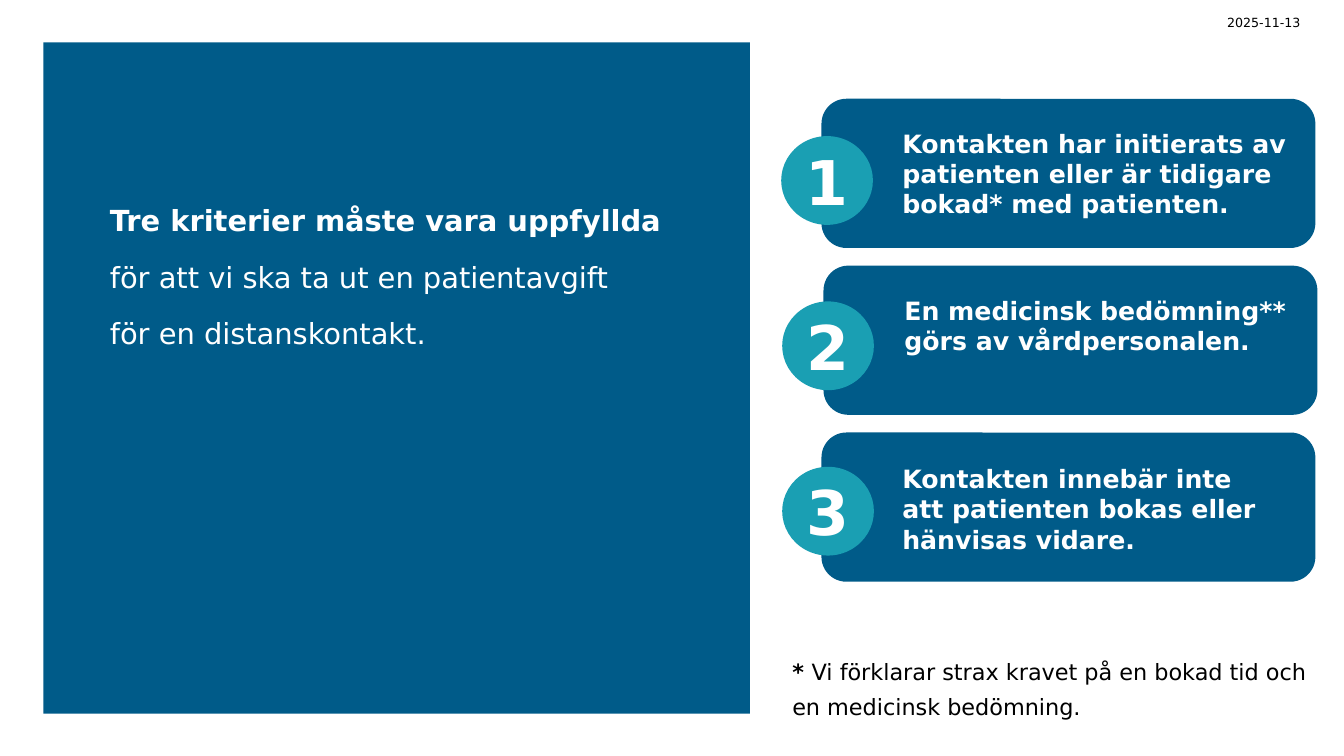
from dataclasses import dataclass

import pptx
import pptx.dml.color
import pptx.enum.shapes
import pptx.enum.text
import pptx.util

Pt = pptx.util.Pt
RGBColor = pptx.dml.color.RGBColor
MSO_SHAPE = pptx.enum.shapes.MSO_SHAPE
MSO_ANCHOR = pptx.enum.text.MSO_ANCHOR
PP_ALIGN = pptx.enum.text.PP_ALIGN

BLUE = RGBColor(0x00, 0x5B, 0x89)
TEAL = RGBColor(0x1A, 0x9F, 0xB3)
WHITE = RGBColor(0xFF, 0xFF, 0xFF)
BLACK = RGBColor(0x00, 0x00, 0x00)
FONT = "DejaVu Sans"

CARD_TOP, CARD_PITCH = 70.56, 119.2
BADGE_TOP, BADGE_PITCH = 97.2, 118.1


@dataclass
class Box:
    left: float
    top: float
    width: float
    height: float


@dataclass
class Run:
    text: str
    bold: bool = False


@dataclass
class Criterion:
    text: str
    card_left: float
    badge_left: float
    top_inset: float = 3.6
    bottom_inset: float = 3.6


CRITERIA = [
    Criterion("Kontakten har initierats av patienten eller är tidigare bokad* med patienten.",
              586.8, 558),
    Criterion("En medicinsk bedömning** görs av vårdpersonalen.",
              588.24, 558.72, bottom_inset=24.6),
    Criterion("Kontakten innebär inte \natt patienten bokas eller hänvisas vidare.",
              586.8, 558.72, top_inset=6),
]


def add_shape(s, kind: MSO_SHAPE, box: Box, fill: RGBColor):
    sp = s.shapes.add_shape(kind, Pt(box.left), Pt(box.top), Pt(box.width), Pt(box.height))
    sp.shadow.inherit = False
    sp.fill.solid()
    sp.fill.fore_color.rgb = fill
    sp.line.fill.background()
    return sp


def add_textbox(s, box: Box, anchor: MSO_ANCHOR):
    sp = s.shapes.add_textbox(Pt(box.left), Pt(box.top), Pt(box.width), Pt(box.height))
    set_insets(sp.text_frame, 0, 0, 0, 0)
    sp.text_frame.vertical_anchor = anchor
    return sp


def set_insets(tf, left: float, top: float, right: float, bottom: float) -> None:
    tf.margin_left, tf.margin_top = Pt(left), Pt(top)
    tf.margin_right, tf.margin_bottom = Pt(right), Pt(bottom)


def write(sp, runs: list[Run], size: float, color: RGBColor, align: PP_ALIGN = PP_ALIGN.LEFT):
    tf = sp.text_frame
    tf.word_wrap = True
    p = tf.paragraphs[0]
    p.alignment = align
    for run in runs:
        for i, line in enumerate(run.text.split("\n")):
            if i:
                p.add_line_break()
            r = p.add_run()
            r.text = line
            r.font.name = FONT
            r.font.size = Pt(size)
            r.font.bold = run.bold
            r.font.color.rgb = color
    return p


def add_card(s, index: int, criterion: Criterion) -> None:
    box = Box(criterion.card_left, CARD_TOP + index * CARD_PITCH, 352.8, 106.56)
    sp = add_shape(s, MSO_SHAPE.ROUNDED_RECTANGLE, box, BLUE)
    sp.text_frame.vertical_anchor = MSO_ANCHOR.MIDDLE
    set_insets(sp.text_frame, 52.56, criterion.top_inset, 7.2, criterion.bottom_inset)
    write(sp, [Run(criterion.text, True)], 18, WHITE)


def add_badge(s, index: int, criterion: Criterion) -> None:
    box = Box(criterion.badge_left, BADGE_TOP + index * BADGE_PITCH, 65.5, 63.4)
    sp = add_shape(s, MSO_SHAPE.OVAL, box, TEAL)
    sp.text_frame.vertical_anchor = MSO_ANCHOR.MIDDLE
    write(sp, [Run(str(index + 1), True)], 44, WHITE, PP_ALIGN.CENTER)


def main() -> None:
    prs = pptx.Presentation()
    prs.slide_width, prs.slide_height = Pt(960), Pt(540)
    s = prs.slides.add_slide(prs.slide_layouts[6])

    add_shape(s, MSO_SHAPE.RECTANGLE, Box(30.96, 30.24, 504.7, 479.5), BLUE)

    title = add_textbox(s, Box(78.5, 139.7, 423.4, 100), MSO_ANCHOR.MIDDLE)
    p = write(title, [Run("Tre kriterier måste vara uppfyllda", True),
                      Run(" för att vi ska ta ut en patientavgift \nför en distanskontakt.")],
              20.7, WHITE)
    p.line_spacing = Pt(40.4)

    date = add_textbox(s, Box(858.2, 10.8, 70.6, 10.8), MSO_ANCHOR.MIDDLE)
    write(date, [Run("2025-11-13")], 9, BLACK, PP_ALIGN.RIGHT)

    note = add_textbox(s, Box(565.9, 464.4, 375.1, 47.5), MSO_ANCHOR.TOP)
    p = write(note, [Run("* ", True),
                     Run("Vi förklarar strax kravet på en bokad tid och en medicinsk bedömning.")],
              16, BLACK)
    p.line_spacing = 1.3

    for i, criterion in enumerate(CRITERIA):
        add_card(s, i, criterion)
        add_badge(s, i, criterion)

    prs.save("out.pptx")


if __name__ == "__main__":
    main()
